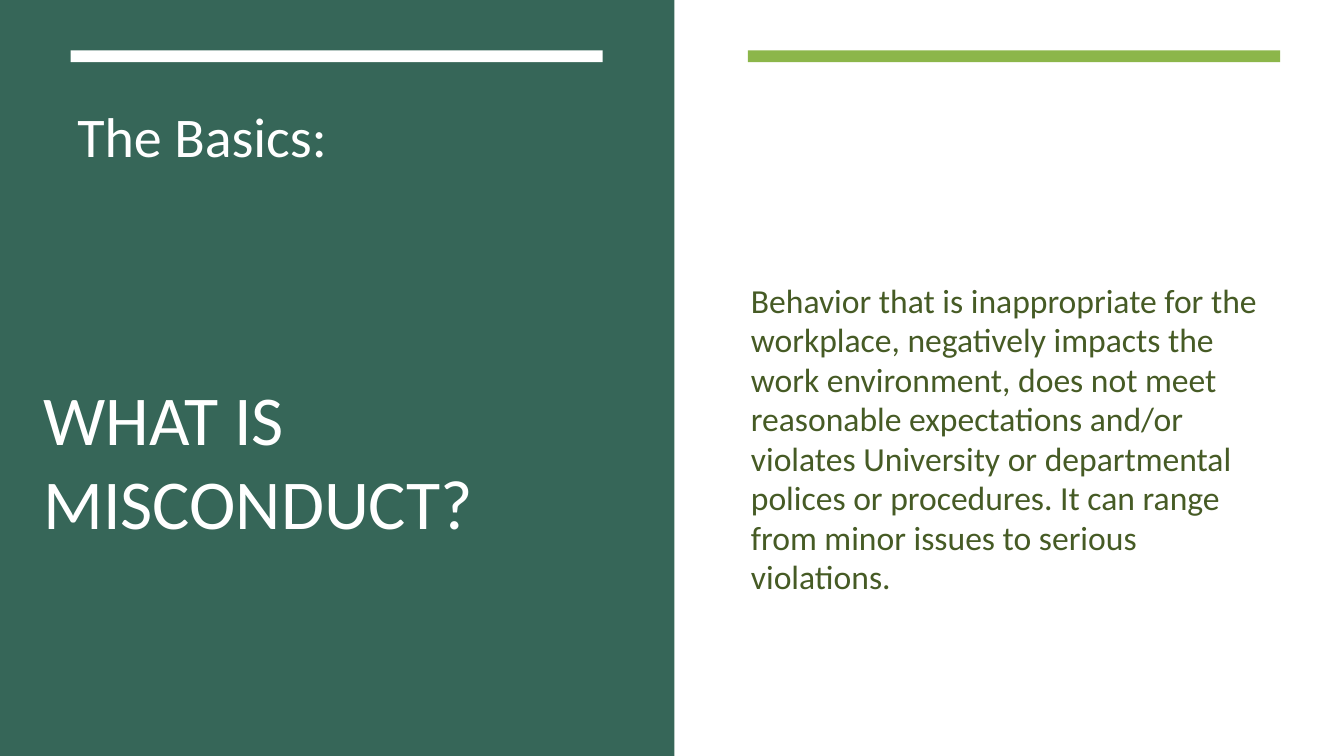
from pptx import Presentation
from pptx.dml.color import RGBColor
from pptx.enum.shapes import MSO_SHAPE
from pptx.enum.text import MSO_ANCHOR, MSO_AUTO_SIZE, PP_ALIGN
from pptx.oxml.ns import qn
from pptx.util import Cm, Pt

RECTANGLE = MSO_SHAPE.RECTANGLE
MIDDLE = MSO_ANCHOR.MIDDLE
NO_AUTOFIT = MSO_AUTO_SIZE.NONE
LEFT = PP_ALIGN.LEFT

WHITE = RGBColor(0xFF, 0xFF, 0xFF)
PINE = RGBColor(0x36, 0x66, 0x58)
LIME = RGBColor(0x8C, 0xB6, 0x4A)
MOSS = RGBColor(0x46, 0x5B, 0x25)

PAGE_WIDTH, PAGE_HEIGHT = Cm(33.87), Cm(19.05)
PANEL_WIDTH = Cm(17)
BAR_TOP, BAR_WIDTH, BAR_HEIGHT = Cm(1.27), Cm(13.41), Cm(0.3)

TITLE_FORMAT = {"name": "Calibri", "size": Pt(50)}
LEAD_FORMAT = {"name": "Calibri", "size": Pt(40)}
BODY_FORMAT = {"name": "Calibri", "size": Pt(24)}

DEFINITION = (
    "Behavior that is inappropriate for the workplace, negatively impacts "
    "the work environment, does not meet reasonable expectations and/or "
    "violates University or departmental polices or procedures. It can range "
    "from minor issues to serious violations."
)


def add_block(page, box, color):
    """Draw a plain filled rectangle."""
    block = page.shapes.add_shape(RECTANGLE, *box)
    block.shadow.inherit = False
    block.fill.solid()
    block.fill.fore_color.rgb = color
    block.line.fill.background()


def place(shape, box):
    """Move a placeholder into its box, in front of the panels."""
    shape.left, shape.top, shape.width, shape.height = box
    shape.element.getparent().append(shape.element)


def write(shape, text, font_format, color):
    """Fill a shape with one left-aligned, vertically centred paragraph."""
    frame = shape.text_frame
    frame.text = text
    frame.word_wrap = True
    frame.auto_size = NO_AUTOFIT
    frame.vertical_anchor = MIDDLE
    para = frame.paragraphs[0]
    para.alignment = LEFT
    para.space_before = Pt(0)
    for name, value in font_format.items():
        setattr(para.runs[0].font, name, value)
    para.runs[0].font.color.rgb = color
    return para


def build_question_panel(page, box):
    """Green panel with its bar, lead-in and title."""
    left, top, _, _ = box
    add_block(page, box, PINE)
    add_block(page, (left + Cm(1.78), top + BAR_TOP, BAR_WIDTH, BAR_HEIGHT), WHITE)

    # Title
    title = page.shapes.title
    place(title, (left + Cm(0.84), top + Cm(6.86), Cm(14.17), Cm(9.42)))
    write(title, "WHAT IS MISCONDUCT?", TITLE_FORMAT, WHITE).line_spacing = 1.0

    # Lead-in
    lead = page.shapes.add_textbox(left + Cm(1.7), top + Cm(1.85), Cm(7.39), Cm(3.12))
    write(lead, "The Basics:", LEAD_FORMAT, WHITE)


def build_answer_panel(page, box):
    """White panel with its bar and the definition."""
    left, top, _, _ = box
    add_block(page, (left + Cm(1.85), top + BAR_TOP, BAR_WIDTH, BAR_HEIGHT), LIME)

    # Definition, without a bullet
    body = page.placeholders[1]
    place(body, (left + Cm(1.67), top + Cm(4.88), Cm(13.49), Cm(13.41)))
    para = write(body, DEFINITION, BODY_FORMAT, MOSS)
    para.line_spacing = 0.98
    body.text_frame.margin_bottom = Cm(1.14)
    properties = para._p.get_or_add_pPr()
    properties.set("marL", "0")
    properties.set("indent", "0")
    properties.append(properties.makeelement(qn("a:buNone"), {}))


def main():
    deck = Presentation()
    deck.slide_width, deck.slide_height = PAGE_WIDTH, PAGE_HEIGHT
    page = deck.slides.add_slide(deck.slide_layouts[1])

    # Backdrop and the two panels
    add_block(page, (0, 0, PAGE_WIDTH, PAGE_HEIGHT), WHITE)
    build_question_panel(page, (0, 0, PANEL_WIDTH, PAGE_HEIGHT))
    build_answer_panel(
        page, (PANEL_WIDTH, 0, PAGE_WIDTH - PANEL_WIDTH, PAGE_HEIGHT)
    )
    deck.save("out.pptx")


if __name__ == "__main__":
    main()
